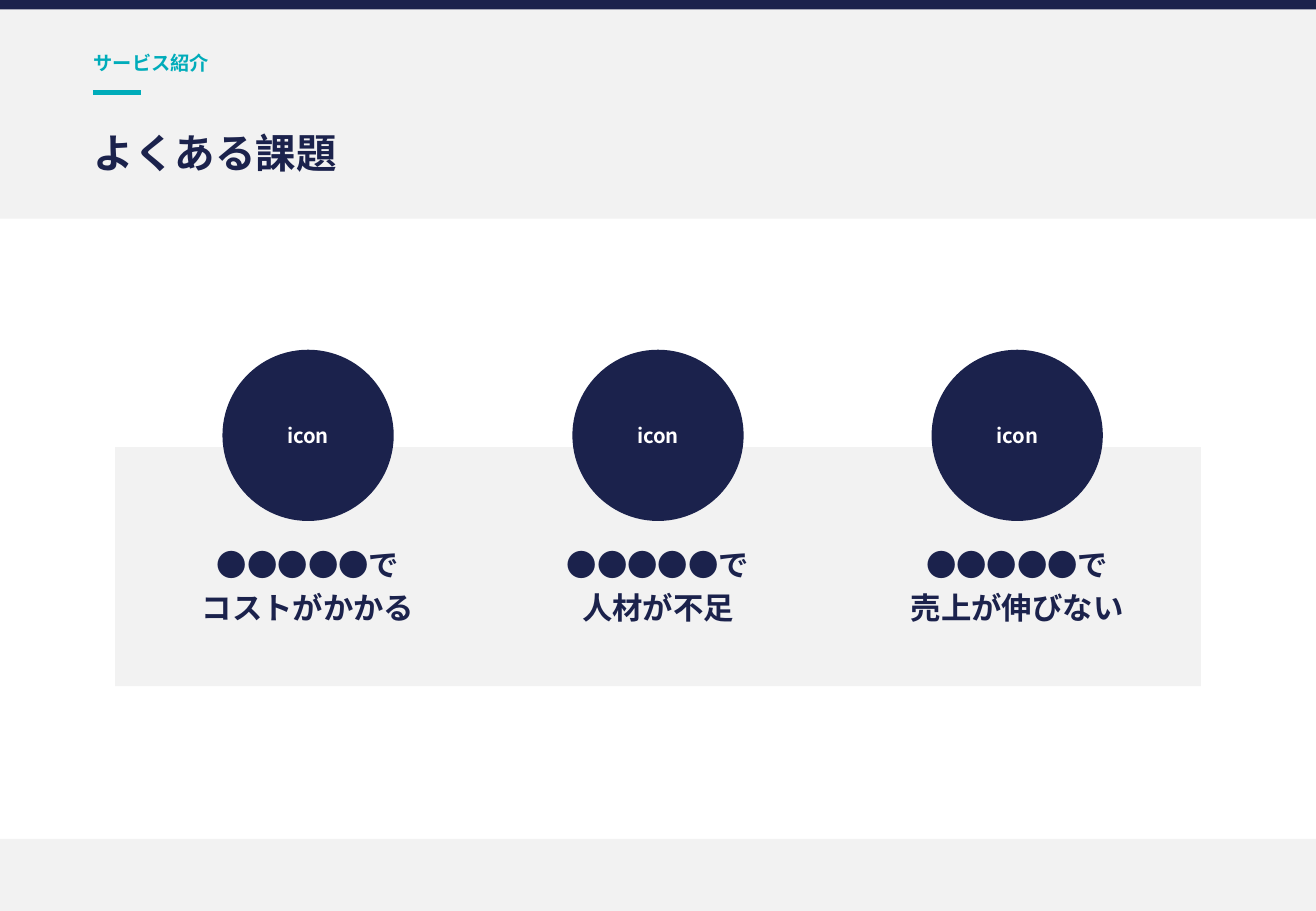
from pptx import Presentation
from pptx.dml.color import RGBColor
from pptx.enum.shapes import MSO_CONNECTOR, MSO_SHAPE
from pptx.enum.text import MSO_ANCHOR, PP_ALIGN
from pptx.oxml.ns import qn
from pptx.util import Pt
from lxml import etree

RECT, OVAL = MSO_SHAPE.RECTANGLE, MSO_SHAPE.OVAL
LINE = MSO_CONNECTOR.STRAIGHT
TOP, MIDDLE = MSO_ANCHOR.TOP, MSO_ANCHOR.MIDDLE
LEFT, CENTER = PP_ALIGN.LEFT, PP_ALIGN.CENTER

NAVY = RGBColor(0x1B, 0x22, 0x4C)
TEAL = RGBColor(0x00, 0xAC, 0xBA)
GRAY = RGBColor(0xF2, 0xF2, 0xF2)
WHITE = RGBColor(0xFF, 0xFF, 0xFF)
FONT = "Noto Sans CJK JP"

WIDTH, HEIGHT = 780, 540
ICON = 101.5
LABEL = 150
ISSUES = [
    (182.6, "コストがかかる"),
    (390, "人材が不足"),
    (602.9, "売上が伸びない"),
]


def add_block(slide, kind, x, y, w, h, color):
    block = slide.shapes.add_shape(kind, Pt(x), Pt(y), Pt(w), Pt(h))
    block.shadow.inherit = False
    block.fill.solid()
    block.fill.fore_color.rgb = color
    block.line.fill.background()
    return block


def add_rule(slide, x, y, w, color, weight):
    rule = slide.shapes.add_connector(LINE, Pt(x), Pt(y), Pt(x + w), Pt(y))
    rule.line.color.rgb = color
    rule.line.width = Pt(weight)
    etree.SubElement(rule._element.spPr, qn("a:effectLst"))


def set_frame(frame, anchor, inset):
    frame.word_wrap = True
    frame.vertical_anchor = anchor
    frame.margin_left = frame.margin_right = Pt(inset)
    frame.margin_top = frame.margin_bottom = Pt(inset)


def add_run(para, text, size, color):
    run = para.add_run()
    run.text = text
    font = run.font
    font.name, font.size, font.bold = FONT, Pt(size), True
    font.color.rgb = color
    for tag in ("a:ea", "a:sym"):
        etree.SubElement(run._r.get_or_add_rPr(), qn(tag), typeface=FONT)


def add_text(slide, x, y, w, h, lines, size, color, align=LEFT,
             anchor=TOP, inset=2.9, pitch=0.85):
    """Add a text box with one paragraph for each line."""
    box = slide.shapes.add_textbox(Pt(x), Pt(y), Pt(w), Pt(h))
    frame = box.text_frame
    set_frame(frame, anchor, inset)
    for i, line in enumerate(lines):
        para = frame.add_paragraph() if i else frame.paragraphs[0]
        para.alignment = align
        para.line_spacing = pitch
        para.space_before = Pt(3.2 if i else 0)
        para.space_after = Pt(4 if len(lines) > 1 else 0)
        add_run(para, line, size, color)


def add_icon(slide, mid):
    icon = add_block(slide, OVAL, mid - ICON / 2, 207.3, ICON, ICON, NAVY)
    set_frame(icon.text_frame, MIDDLE, 3)
    para = icon.text_frame.paragraphs[0]
    para.alignment = CENTER
    add_run(para, "icon", 12, WHITE)


def add_issue(slide, mid, text):
    add_icon(slide, mid)
    add_text(slide, mid - LABEL / 2, 324.7, LABEL, 67.7,
             ["●●●●●で", text], 18, NAVY, CENTER, inset=2.2)


def main():
    deck = Presentation()
    deck.slide_width, deck.slide_height = Pt(WIDTH), Pt(HEIGHT)
    slide = deck.slides.add_slide(deck.slide_layouts[6])

    add_block(slide, RECT, 0, 497.3, WIDTH, 42.7, GRAY)
    add_block(slide, RECT, 0, 0, WIDTH, 129.7, GRAY)
    add_rule(slide, 55, 54.8, 28.6, TEAL, 2.5)
    add_block(slide, RECT, 0, 0, WIDTH, 5.6, NAVY)
    add_text(slide, 52.6, 29.5, 674.6, 20.2, ["サービス紹介"], 11.4, TEAL)
    add_text(slide, 52.6, 70.6, 674.6, 42.5, ["よくある課題"], 24, NAVY,
             anchor=MIDDLE, pitch=0.9)

    add_block(slide, RECT, 68.2, 265, 643.6, 141.8, GRAY)
    for mid, text in ISSUES:
        add_issue(slide, mid, text)
    deck.save("out.pptx")


if __name__ == "__main__":
    main()
